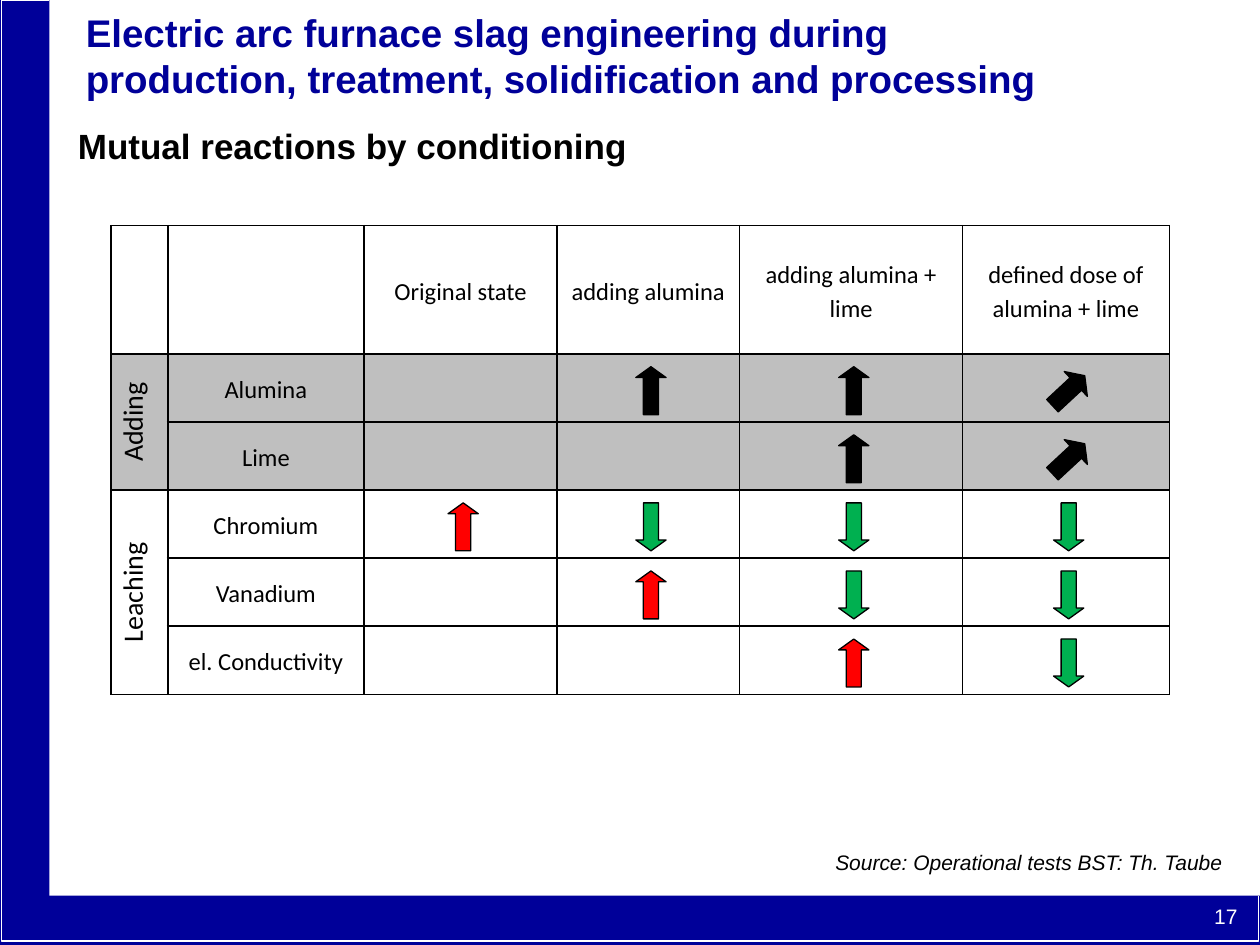
from dataclasses import dataclass
from itertools import accumulate
from lxml.etree import SubElement
from pptx import Presentation
from pptx.dml.color import RGBColor as RGB
from pptx.enum.shapes import MSO_SHAPE as Shape
from pptx.enum.text import MSO_ANCHOR as Anchor, MSO_AUTO_SIZE as Fit, PP_ALIGN as Align
from pptx.oxml import parse_xml
from pptx.oxml.ns import nsdecls, qn
from pptx.util import Pt


@dataclass(frozen=True)
class Theme:
    navy: RGB = RGB(0x00, 0x00, 0x99)
    white: RGB = RGB(0xFF, 0xFF, 0xFF)
    black: RGB = RGB(0, 0, 0)
    gray: RGB = RGB(0xBF, 0xBF, 0xBF)
    red: RGB = RGB(0xFF, 0, 0)
    green: RGB = RGB(0, 0xB0, 0x50)
    head: str = "Arial"
    body: str = "Calibri"
    title: int = 22
    sub: int = 20
    side: int = 16
    cell: int = 14
    small: int = 12


T = Theme()

COLS = (32.4, 112.3, 110.2, 104.4, 127.4, 118.1)
ROWS = (73.4,) + (38.9,) * 5
HEADS = ("Original state", "adding alumina", "adding alumina + lime",
         "defined dose of\valumina + lime")
ITEMS = ("Alumina", "Lime", "Chromium", "Vanadium", "el. Conductivity")
SIDES = {1: ("Adding", 2), 3: ("Leaching", 3)}  # first row: label, rows spanned
GRAY_ROWS = (1, 2)

# Line widths at each row and column edge
ROW_EDGES = (1, 1.5, 1, 1.5, 1, 1, 1)
COL_EDGES = (1, 1.5, 1.5, 1, 1, 1, 1)

# Arrow kinds: fill, turn, width, height
KINDS = {
    "add": (T.black, 0, 17.3, 27.4),
    "dose": (T.black, 47.1, 19.4, 25.2),
    "rise": (T.red, 0, 17.3, 27.4),
    "fall": (T.green, 180, 17.3, 27.4),
}
TRENDS = (  # one row for each item, one column for each state
    (None, "add", "add", "dose"),
    (None, None, "add", "dose"),
    ("rise", "fall", "fall", "fall"),
    (None, "rise", "fall", "fall"),
    (None, None, "rise", "fall"),
)


def style(para, size, color=T.black, face=T.head, bold=False, italic=False, align=Align.LEFT):
    para.alignment = align
    for run in para.runs:
        font = run.font
        font.name, font.size, font.bold, font.italic = face, Pt(size), bold, italic
        font.color.rgb = color


def add_text(slide, box, text, size, wrap=True, **look):
    frame = slide.shapes.add_textbox(*map(Pt, box)).text_frame
    frame.word_wrap = wrap
    frame.text = text
    style(frame.paragraphs[0], size, **look)


def add_frame(slide, box):
    """Navy bars at the left and bottom, with a thin white rule."""
    x, y, w, h = box
    bar = 28.2
    for part in ((x, y, bar, h), (x, y + h - bar, w, bar)):
        rect = slide.shapes.add_shape(Shape.RECTANGLE, *map(Pt, part))
        rect.shadow.inherit = False
        rect.fill.solid()
        rect.fill.fore_color.rgb = T.navy
        rect.line.fill.background()
    left, low, right = x + 0.7, y + h - 2.2, x + w - 0.7
    path = slide.shapes.build_freeform(Pt(x + bar), Pt(y))
    path.add_line_segments([(Pt(a), Pt(b)) for a, b in (
        (left, y), (left, low), (right, low), (right, y + h - bar))], close=False)
    rule = path.convert_to_shape()
    rule.shadow.inherit = False
    rule.fill.background()
    rule.line.color.rgb = T.white
    rule.line.width = Pt(0.75)


def add_title(slide, box, text):
    title = slide.shapes.title
    title.left, title.top, title.width, title.height = map(Pt, box)
    frame = title.text_frame
    frame.text = text
    frame.word_wrap = True
    frame.auto_size = Fit.NONE
    frame.vertical_anchor = Anchor.TOP
    style(frame.paragraphs[0], T.title, T.navy, bold=True)


def set_edges(cell, widths):
    props = cell._tc.get_or_add_tcPr()
    for i, (side, width) in enumerate(zip("LRTB", widths)):
        line = parse_xml(f'<a:ln{side} {nsdecls("a")} w="{Pt(width)}"/>')
        fill = SubElement(line, qn("a:solidFill"))
        SubElement(fill, qn("a:srgbClr")).set("val", str(T.black))
        props.insert(i, line)


def fill_cell(cell, text, size=T.cell):
    cell.text = text
    cell.vertical_anchor = Anchor.MIDDLE
    cell.margin_left = cell.margin_right = Pt(5)
    cell.margin_top = cell.margin_bottom = 0
    para = cell.text_frame.paragraphs[0]
    para.line_spacing = 1.15
    style(para, size, face=T.body, align=Align.CENTER)


def add_grid(slide, box):
    table = slide.shapes.add_table(len(ROWS), len(COLS), *map(Pt, box)).table
    table.first_row = table.horz_banding = False
    for col, width in zip(table.columns, COLS):
        col.width = Pt(width)
    for row, height in zip(table.rows, ROWS):
        row.height = Pt(height)

    # Labels
    for c, text in enumerate(HEADS, 2):
        fill_cell(table.cell(0, c), text)
    for r, text in enumerate(ITEMS, 1):
        fill_cell(table.cell(r, 1), text)
    for r, (text, span) in SIDES.items():
        cell = table.cell(r, 0)
        cell.merge(table.cell(r + span - 1, 0))
        fill_cell(cell, text, T.side)
        cell._tc.get_or_add_tcPr().set("vert", "vert270")

    # Fills and borders
    for r in range(len(ROWS)):
        for c in range(len(COLS)):
            cell = table.cell(r, c)
            if r in GRAY_ROWS:
                cell.fill.solid()
                cell.fill.fore_color.rgb = T.gray
            else:
                cell.fill.background()
            end = r + (cell.span_height if cell.is_merge_origin else 1)
            set_edges(cell, (COL_EDGES[c], COL_EDGES[c + 1], ROW_EDGES[r], ROW_EDGES[end]))


def add_trends(slide, box):
    """Arrows near the middle of their table cells."""
    shift = 1.5
    lefts = list(accumulate(COLS, initial=box[0] + shift))
    tops = list(accumulate(ROWS, initial=box[1] + shift))
    for r, row in enumerate(TRENDS, 1):
        for c, kind in enumerate(row, 2):
            if kind is None:
                continue
            color, turn, w, h = KINDS[kind]
            x = (lefts[c] + lefts[c + 1] - w) / 2
            y = (tops[r] + tops[r + 1] - h) / 2
            arrow = slide.shapes.add_shape(Shape.UP_ARROW, Pt(x), Pt(y), Pt(w), Pt(h))
            arrow.adjustments[0], arrow.adjustments[1] = 0.5, 0.36
            arrow.rotation = turn
            arrow.shadow.inherit = False
            arrow.fill.solid()
            arrow.fill.fore_color.rgb = color
            arrow.line.color.rgb = T.black
            arrow.line.width = Pt(0.75)


def main():
    deck = Presentation()
    deck.slide_width, deck.slide_height = Pt(720), Pt(540)
    slide = deck.slides.add_slide(deck.slide_layouts[5])
    add_frame(slide, (0, 0, 720, 540))
    add_text(slide, (640, 512.6, 74.2, 27.4), "17", T.small, color=T.white, align=Align.RIGHT)
    add_title(slide, (41.8, 1.4, 569.5, 60.5),
              "Electric arc furnace slag engineering during production, "
              "treatment, solidification and processing")
    grid = (63.4, 128.9, sum(COLS), sum(ROWS))
    add_grid(slide, grid)
    add_trends(slide, grid)
    add_text(slide, (37.4, 67.7, 530, 31.7), "Mutual reactions by conditioning", T.sub, bold=True)
    add_text(slide, (470.2, 481.7, 238.3, 21.6), "Source: Operational tests BST: Th. Taube",
             T.small, wrap=False, italic=True)
    deck.save("out.pptx")


if __name__ == "__main__":
    main()
